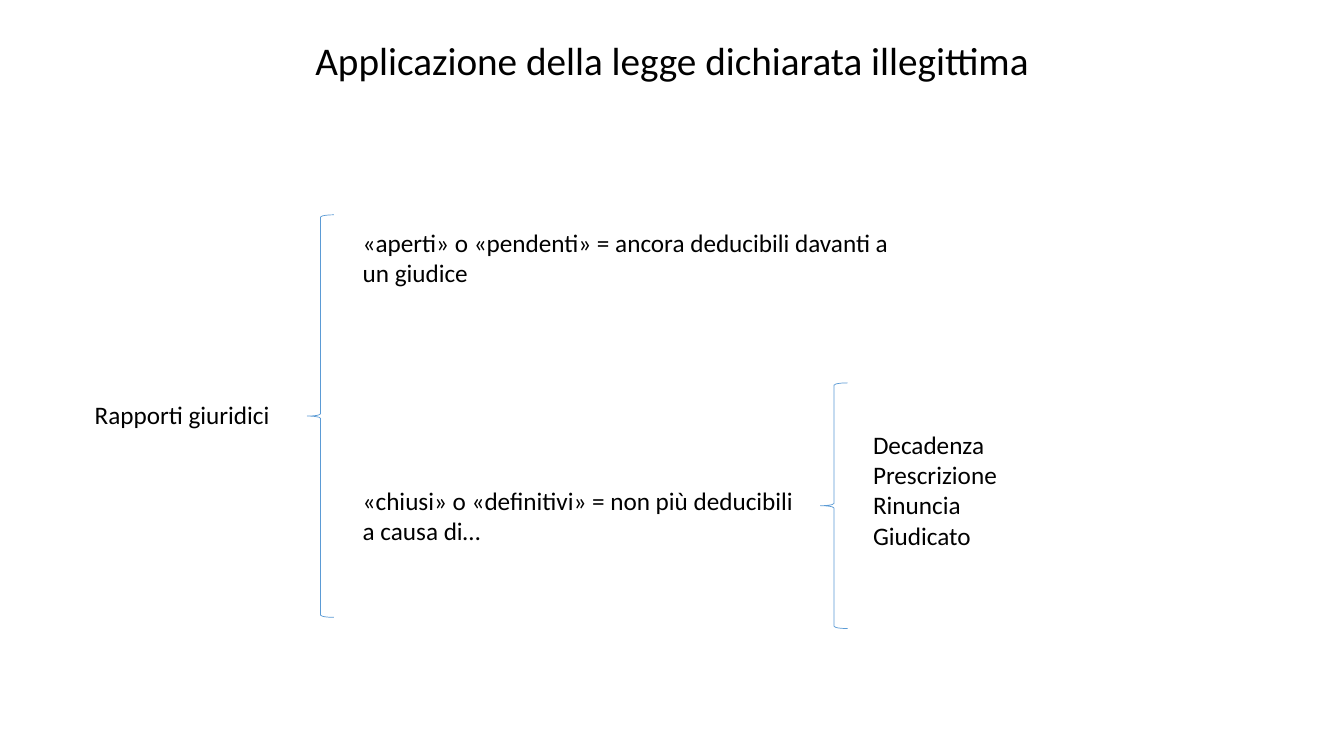
from dataclasses import dataclass

from pptx import Presentation
from pptx.dml.color import RGBColor
from pptx.enum.shapes import MSO_SHAPE
from pptx.enum.text import MSO_ANCHOR, PP_ALIGN
from pptx.util import Pt

LEFT_BRACE = MSO_SHAPE.LEFT_BRACE
BOTTOM = MSO_ANCHOR.BOTTOM
CENTER = PP_ALIGN.CENTER


@dataclass(frozen=True)
class Theme:
    font: str = "Calibri"
    text: RGBColor = RGBColor(0x00, 0x00, 0x00)
    brace: RGBColor = RGBColor(0x5B, 0x9B, 0xD5)
    title_size: int = 28
    body_size: int = 18


theme = Theme()


def write(tf, lines, size):
    tf.word_wrap = True
    tf.text = "\n".join(lines)
    for p in tf.paragraphs:
        p.font.name = theme.font
        p.font.size = Pt(size)
        p.font.color.rgb = theme.text


prs = Presentation()
prs.slide_width = Pt(960)
prs.slide_height = Pt(540)
s = prs.slides.add_slide(prs.slide_layouts[5])

title = s.shapes.title
title.left, title.top, title.width, title.height = Pt(120), Pt(19.5), Pt(720), Pt(44)
tf = title.text_frame
write(tf, ["Applicazione della legge dichiarata illegittima"], theme.title_size)
tf.vertical_anchor = BOTTOM
tf.paragraphs[0].alignment = CENTER
tf.paragraphs[0].line_spacing = 0.9

labels = [
    (60.5, 281.5, 159, 29, ["Rapporti giuridici"]),
    (252, 159, 412.5, 51, ["«aperti» o «pendenti» = ancora deducibili davanti a un giudice"]),
    (252, 343, 369.5, 51, ["«chiusi» o «definitivi» = non più deducibili", "a causa di…"]),
    (616.5, 303, 189.5, 94.5, ["Decadenza", "Prescrizione", "Rinuncia", "Giudicato"]),
]
for x, y, w, h, lines in labels:
    sp = s.shapes.add_textbox(Pt(x), Pt(y), Pt(w), Pt(h))
    write(sp.text_frame, lines, theme.body_size)

braces = [(219.5, 153.5, 19, 287.5), (586, 273.5, 19.5, 175.5)]
for x, y, w, h in braces:
    sp = s.shapes.add_shape(LEFT_BRACE, Pt(x), Pt(y), Pt(w), Pt(h))
    sp.shadow.inherit = False
    sp.fill.background()
    sp.line.color.rgb = theme.brace
    sp.line.width = Pt(0.5)

prs.save("out.pptx")
